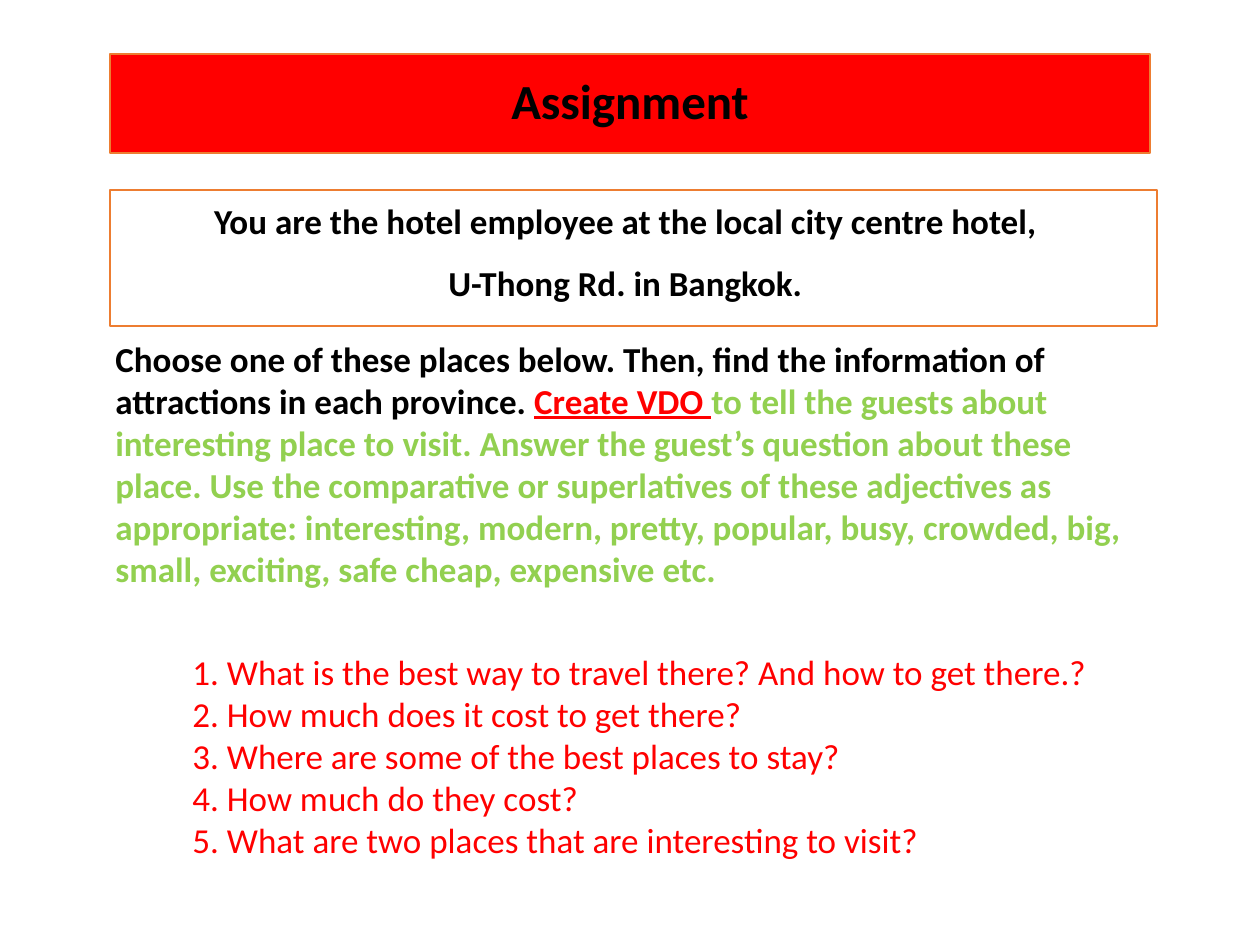
from pptx import Presentation
from pptx.dml.color import RGBColor
from pptx.enum.shapes import MSO_SHAPE
from pptx.enum.text import MSO_ANCHOR, PP_ALIGN
from pptx.util import Pt

RECT = MSO_SHAPE.RECTANGLE
TOP, MIDDLE = MSO_ANCHOR.TOP, MSO_ANCHOR.MIDDLE
CENTER = PP_ALIGN.CENTER
SCALE = 914400 / 126
COLORS = {"red": "FF0000", "orange": "ED7D31", "black": "000000",
          "green": "92D050", "white": "FFFFFF"}

ROLE = ["You are the hotel employee at the local city centre hotel,",
        "U-Thong Rd. in Bangkok."]
TASK = [
    ("Choose one of these places below. Then, find the information of "
     "attractions in each province. ", "black", False),
    ("Create VDO ", "red", True),
    ("to tell the guests about interesting place to visit. Answer the "
     "guest’s question about these place. Use the comparative or "
     "superlatives of these adjectives as appropriate: interesting, modern, "
     "pretty, popular, busy, crowded, big, small, exciting, safe cheap, "
     "expensive etc.", "green", False),
]
ASKS = ["1. What is the best way to travel there? And how to get there.?",
        "2. How much does it cost to get there?",
        "3. Where are some of the best places to stay?",
        "4. How much do they cost?",
        "5. What are two places that are interesting to visit?"]


def px(n):
    return round(n * SCALE)


def tint(name):
    return RGBColor.from_string(COLORS[name])


def style(para, size, bold, color=None):
    font = para.font
    font.name = "Calibri"
    font.size = Pt(size)
    font.bold = bold
    if color:
        font.color.rgb = tint(color)


def fill_text(frame, lines, size, bold, color):
    frame.word_wrap = True
    for i, line in enumerate(lines):
        para = frame.paragraphs[0] if i == 0 else frame.add_paragraph()
        para.text = line
        style(para, size, bold, color)


def add_panel(slide, box, fill, anchor):
    panel = slide.shapes.add_shape(RECT, *map(px, box))
    panel.shadow.inherit = False
    panel.fill.solid()
    panel.fill.fore_color.rgb = tint(fill)
    panel.line.color.rgb = tint("orange")
    panel.line.width = Pt(1)
    panel.text_frame.vertical_anchor = anchor
    return panel.text_frame


def add_title(slide, box):
    frame = add_panel(slide, box, "red", MIDDLE)
    fill_text(frame, ["Assignment"], 28, True, "black")
    frame.paragraphs[0].alignment = CENTER
    frame.paragraphs[0].line_spacing = 0.9


def add_role(slide, box):
    frame = add_panel(slide, box, "white", TOP)
    frame.margin_left, frame.margin_right = px(9), px(25)
    frame.margin_top = frame.margin_bottom = px(5)
    fill_text(frame, ROLE, 20, True, "black")
    for para in frame.paragraphs:
        para.alignment = CENTER
        para.line_spacing = 1.1
        para.space_before = Pt(9)


def add_task(slide, box):
    frame = slide.shapes.add_textbox(*map(px, box)).text_frame
    frame.word_wrap = True
    para = frame.paragraphs[0]
    style(para, 20, True)
    for text, color, under in TASK:
        run = para.add_run()
        run.text = text
        run.font.color.rgb = tint(color)
        run.font.underline = under


def add_asks(slide, box):
    frame = slide.shapes.add_textbox(*map(px, box)).text_frame
    fill_text(frame, ASKS, 20, False, "red")


def main():
    deck = Presentation()
    deck.slide_width, deck.slide_height = px(1260), px(945)
    slide = deck.slides.add_slide(deck.slide_layouts[6])
    add_asks(slide, (180, 644, 970, 224))
    add_task(slide, (103, 331, 1053, 310))
    add_title(slide, (110, 54, 1040, 99))
    add_role(slide, (110, 190, 1047, 136))
    deck.save("out.pptx")


if __name__ == "__main__":
    main()
